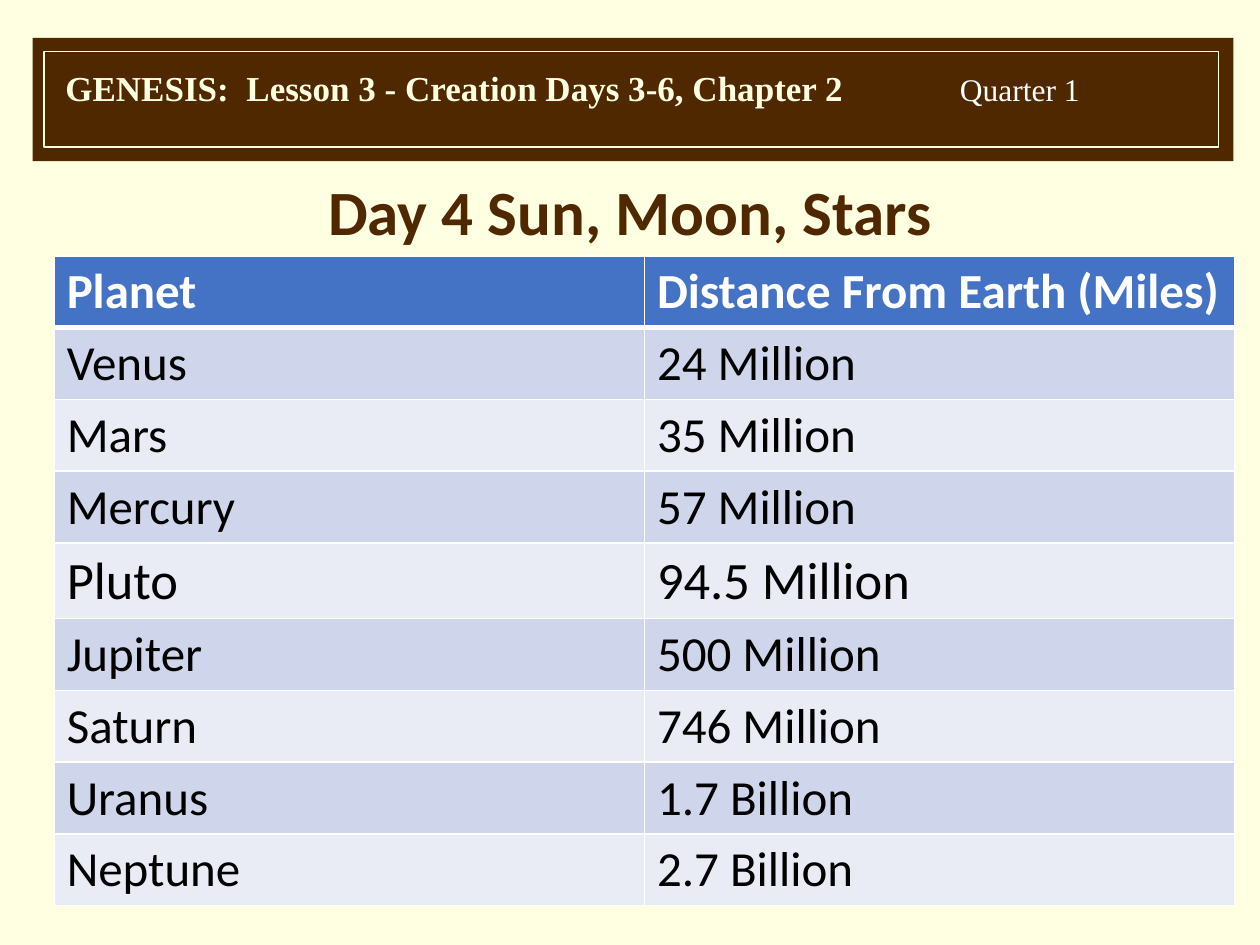
"""Build the Day 4 lesson slide with its table of planet distances."""
from lxml.etree import SubElement
from pptx import Presentation
from pptx.dml.color import RGBColor
from pptx.enum.shapes import MSO_SHAPE
from pptx.enum.text import MSO_ANCHOR, MSO_AUTO_SIZE, PP_ALIGN
from pptx.oxml.ns import qn
from pptx.util import Inches, Pt

CREAM, BROWN, WHITE, BLACK = "FFFFE1", "502800", "FFFFFF", "000000"
HEADER, BANDS = "4472C4", ("E9EBF5", "CFD5EA")
SERIF, SANS = "Times New Roman", "Calibri"


def rgb(value):
    """Turn a hex string into a colour."""
    return RGBColor.from_string(value)


def write(tf, text, color, **font):
    """Put one formatted run into a text frame and return its paragraph."""
    p = tf.paragraphs[0]
    r = p.add_run()
    r.text = text
    r.font.color.rgb = rgb(color)
    for name, value in font.items():
        setattr(r.font, name, value)
    return p


prs = Presentation()
prs.slide_width, prs.slide_height = Inches(10), Inches(7.5)
s = prs.slides.add_slide(prs.slide_layouts[5])
s.background.fill.solid()
s.background.fill.fore_color.rgb = rgb(CREAM)

banner = s.shapes.add_shape(
    MSO_SHAPE.RECTANGLE, Inches(0.26), Inches(0.3), Inches(9.53), Inches(0.98))
banner.fill.solid()
banner.fill.fore_color.rgb = rgb(BROWN)
banner.line.fill.background()
frame = s.shapes.add_shape(
    MSO_SHAPE.RECTANGLE, Inches(0.35), Inches(0.41), Inches(9.32), Inches(0.76))
frame.fill.background()
frame.line.color.rgb = rgb(CREAM)
frame.line.width = Pt(1)
for sp in (banner, frame):
    sp.shadow.inherit = False

labels = [
    ("GENESIS:  Lesson 3 - Creation Days 3-6, Chapter 2",
     (0.42, 0.48, 8.48, 0.44), CREAM, 20, True),
    ("Quarter 1", (7.52, 0.51, 1.55, 0.4), WHITE, 18, False),
]
for text, box, color, size, bold in labels:
    tf = s.shapes.add_textbox(*map(Inches, box)).text_frame
    tf.word_wrap = True
    write(tf, text, color, size=Pt(size), name=SERIF, bold=bold)

title = s.shapes.title
place = {"left": 0.09, "top": 1.39, "width": 9.82, "height": 5.95}
for name, value in place.items():
    setattr(title, name, Inches(value))
tf = title.text_frame
tf.word_wrap = True
tf.auto_size = MSO_AUTO_SIZE.NONE
tf.vertical_anchor = MSO_ANCHOR.TOP
p = write(tf, "Day 4 Sun, Moon, Stars", BROWN, size=Pt(36), name=SANS, bold=True)
layout = {"alignment": PP_ALIGN.CENTER, "line_spacing": 0.9, "space_before": Pt(10)}
for name, value in layout.items():
    setattr(p, name, value)

rows = [
    ("Planet", "Distance From Earth (Miles)"),
    ("Venus", "24 Million"),
    ("Mars", "35 Million"),
    ("Mercury", "57 Million"),
    ("Pluto", "94.5 Million"),
    ("Jupiter", "500 Million"),
    ("Saturn", "746 Million"),
    ("Uranus", "1.7 Billion"),
    ("Neptune", "2.7 Billion"),
]
table = s.shapes.add_table(
    len(rows), 2, Inches(0.43), Inches(2.03), Inches(9.37), Inches(5.13)).table
for i, row in enumerate(rows):
    head = i == 0
    for j, text in enumerate(row):
        cell = table.cell(i, j)
        tcPr = cell._tc.get_or_add_tcPr()
        thick = {0: "lnB", 1: "lnT"}.get(i)
        for side in ("lnL", "lnR", "lnT", "lnB"):
            ln = SubElement(tcPr, qn(f"a:{side}"), w=str(Pt(3 if side == thick else 1)))
            SubElement(SubElement(ln, qn("a:solidFill")), qn("a:srgbClr"), val=WHITE)
        cell.fill.solid()
        cell.fill.fore_color.rgb = rgb(HEADER if head else BANDS[i % 2])
        write(cell.text_frame, text, WHITE if head else BLACK,
              size=Pt(30 if row[0] == "Pluto" else 28), name=SANS, bold=head)

prs.save("out.pptx")
